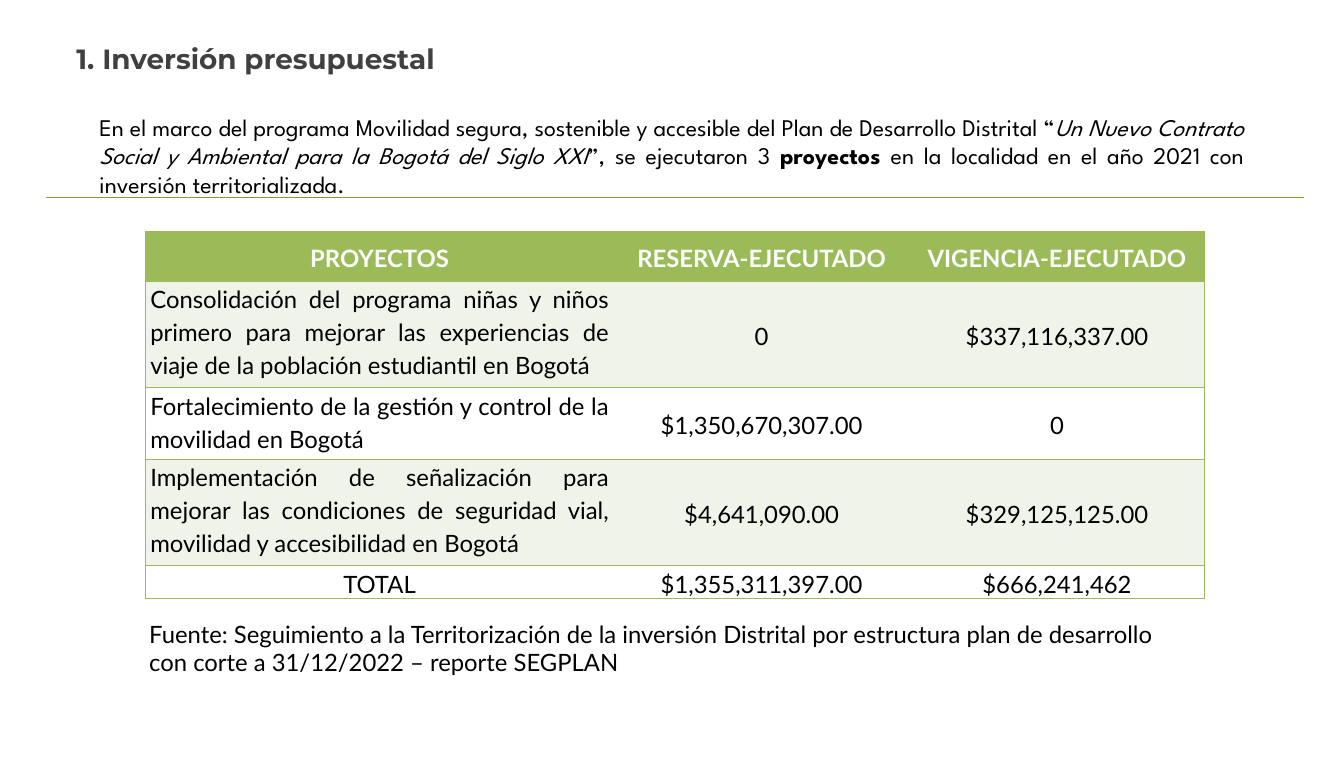
from dataclasses import dataclass

from lxml.etree import SubElement
from pptx import Presentation
from pptx.dml.color import RGBColor
from pptx.enum.shapes import MSO_CONNECTOR
from pptx.enum.text import MSO_ANCHOR, MSO_AUTO_SIZE, PP_ALIGN
from pptx.oxml.ns import qn
from pptx.util import Cm, Pt


@dataclass(frozen=True)
class Theme:
    black: str = "000000"
    white: str = "FFFFFF"
    heading: str = "404040"
    rule: str = "94962C"
    green: str = "9BBB59"
    band: str = "EFF3EA"
    title_size: int = 28
    body_size: int = 24
    title_font: str = "Montserrat"
    intro_font: str = "League Spartan"
    table_font: str = "Lato"


theme = Theme()


def add_run(para, text, font, color=theme.black, size=theme.body_size, bold=False, italic=False):
    span = para.add_run()
    span.text = text
    span.font.name = font
    span.font.size = Pt(size)
    span.font.bold = bold
    span.font.italic = italic
    span.font.color.rgb = RGBColor.from_string(color)


def set_borders(cell, visible_sides):
    """Draw the named sides (L, R, T, B) in green and clear the others."""
    properties = cell._tc.get_or_add_tcPr()
    for index, side in enumerate("LRTB"):
        border = properties.makeelement(qn(f"a:ln{side}"), {"w": str(Pt(1))})
        properties.insert(index, border)
        if side in visible_sides:
            fill = SubElement(border, qn("a:solidFill"))
            SubElement(fill, qn("a:srgbClr"), val=theme.green)
        else:
            SubElement(border, qn("a:noFill"))


deck = Presentation()
deck.slide_width, deck.slide_height = Cm(47.73), Cm(26.95)
page = deck.slides.add_slide(deck.slide_layouts.get_by_name("Title Only"))

# Title
title = page.shapes.title
title.left, title.top, title.width, title.height = Cm(2.18), Cm(1.35), Cm(29.41), Cm(1.45)
frame = title.text_frame
frame.auto_size = MSO_AUTO_SIZE.NONE
frame.vertical_anchor = MSO_ANCHOR.TOP
frame.margin_left = Cm(0.53)
para = frame.paragraphs[0]
para.alignment = PP_ALIGN.LEFT
add_run(para, "1. Inversión presupuestal", theme.title_font, theme.heading, theme.title_size, bold=True)

# Introduction and source note
intro = [
    ("En el marco del programa Movilidad segura, sostenible y accesible del Plan de Desarrollo Distrital “", {}),
    ("Un Nuevo Contrato Social y Ambiental para la Bogotá del Siglo XXI", {"italic": True}),
    ("”, se ejecutaron 3", {}),
    (" proyectos ", {"bold": True}),
    ("en la localidad en el año 2021 con inversión territorializada.", {}),
]
source = [
    ("Fuente: Seguimiento a la Territorización de la inversión Distrital por estructura "
     "plan de desarrollo con corte a 31/12/2022 – reporte SEGPLAN", {}),
]
text_boxes = [
    (3.28, 3.86, 41.15, 3.33, PP_ALIGN.JUSTIFY, theme.intro_font, intro),
    (5.05, 21.87, 37.59, 2.31, PP_ALIGN.LEFT, theme.table_font, source),
]
for left, top, width, height, alignment, font, spans in text_boxes:
    box = page.shapes.add_textbox(Cm(left), Cm(top), Cm(width), Cm(height))
    box.text_frame.word_wrap = True
    para = box.text_frame.paragraphs[0]
    para.alignment = alignment
    for text, style in spans:
        add_run(para, text, font, **style)

# Rule below the introduction
rule = page.shapes.add_connector(MSO_CONNECTOR.STRAIGHT, Cm(1.63), Cm(7.01), Cm(46.3), Cm(7.01))
rule.line.color.rgb = RGBColor.from_string(theme.rule)
rule.line.width = Pt(0.75)
SubElement(rule._element.spPr, qn("a:effectLst"))

# Budget table
rows = [
    ("PROYECTOS", "RESERVA-EJECUTADO", "VIGENCIA-EJECUTADO"),
    ("Consolidación del programa niñas y niños primero para mejorar las experiencias "
     "de viaje de la población estudiantil en Bogotá", "0", "$337,116,337.00"),
    ("Fortalecimiento de la gestión y control de la movilidad en Bogotá",
     "$1,350,670,307.00", "0"),
    ("Implementación de señalización para mejorar las condiciones de seguridad vial, "
     "movilidad y accesibilidad en Bogotá", "$4,641,090.00", "$329,125,125.00"),
    ("TOTAL", "$1,355,311,397.00", "$666,241,462"),
]
column_widths = [16.64, 10.49, 10.49]
row_heights = [1.78, 3.78, 2.54, 3.78, 1.17]
column_sides = ["LTB", "TB", "RTB"]

table = page.shapes.add_table(
    len(rows), len(column_widths), Cm(5.16), Cm(8.2), Cm(sum(column_widths)), Cm(sum(row_heights))
).table
table.first_row = table.horz_banding = False
for column, width in zip(table.columns, column_widths):
    column.width = Cm(width)

for row_index, (texts, height) in enumerate(zip(rows, row_heights)):
    table.rows[row_index].height = Cm(height)
    is_header = row_index == 0
    is_total = row_index == len(rows) - 1
    fill = theme.green if is_header else theme.band if row_index % 2 else theme.white
    for column_index, text in enumerate(texts):
        cell = table.cell(row_index, column_index)
        is_project = column_index == 0 and not is_header
        cell.fill.solid()
        cell.fill.fore_color.rgb = RGBColor.from_string(fill)
        cell.margin_left = cell.margin_right = Cm(0.18)
        cell.margin_top = cell.margin_bottom = 0
        cell.vertical_anchor = MSO_ANCHOR.TOP if is_project else MSO_ANCHOR.MIDDLE
        set_borders(cell, column_sides[column_index])
        para = cell.text_frame.paragraphs[0]
        para.alignment = PP_ALIGN.JUSTIFY if is_project and not is_total else PP_ALIGN.CENTER
        para.line_spacing = 1.15
        para.space_after = Pt(10)
        add_run(para, text, theme.table_font, theme.white if is_header else theme.black, bold=is_header)

deck.save("out.pptx")
